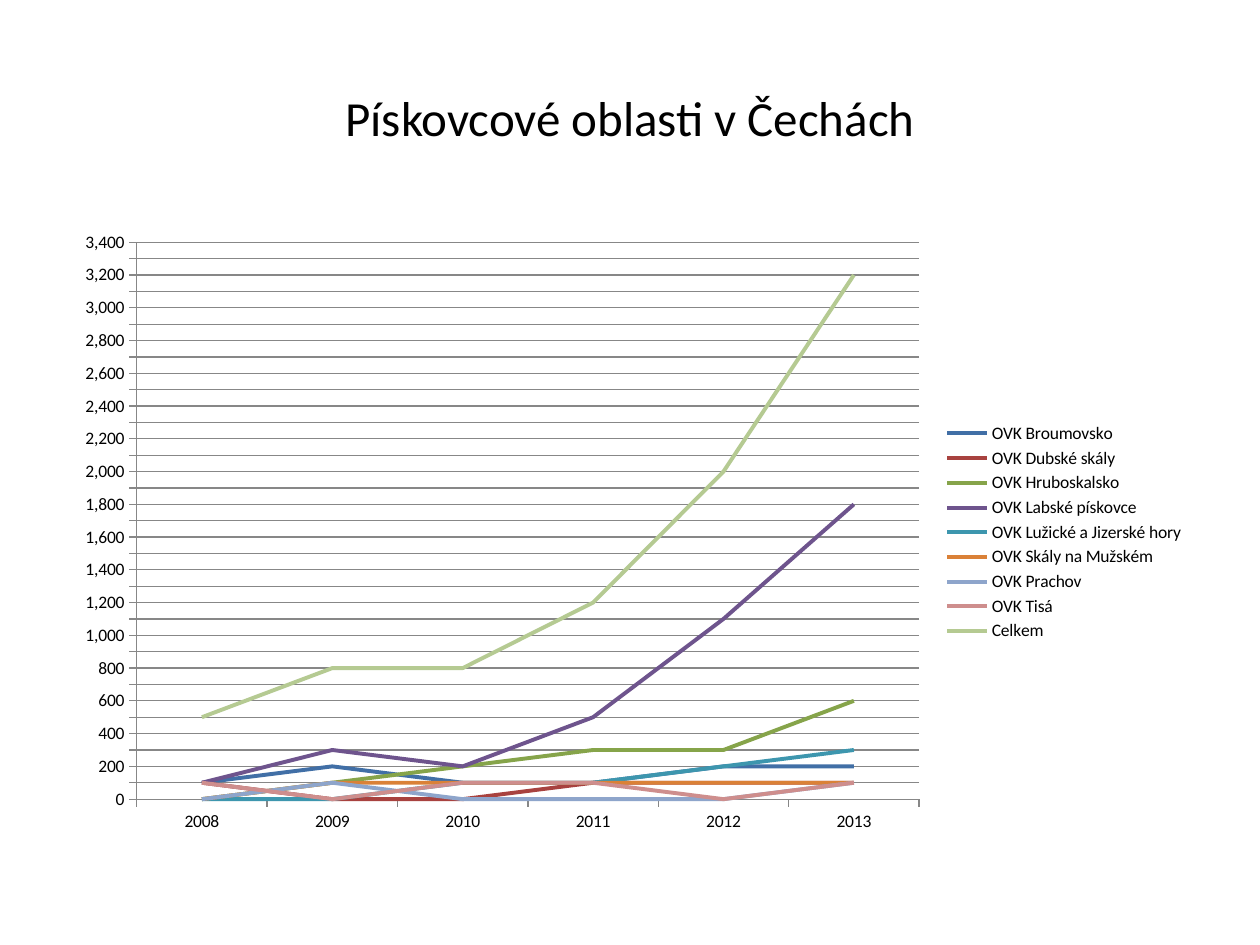
from typing import NamedTuple

from lxml import etree
from pptx import Presentation
from pptx.chart.data import CategoryChartData
from pptx.dml.color import RGBColor
from pptx.enum.chart import XL_CHART_TYPE, XL_LEGEND_POSITION, XL_MARKER_STYLE, XL_TICK_MARK
from pptx.enum.text import MSO_ANCHOR, PP_ALIGN
from pptx.oxml.ns import qn
from pptx.util import Inches, Pt

LINE_CHART = XL_CHART_TYPE.LINE
LEGEND_RIGHT = XL_LEGEND_POSITION.RIGHT
NO_MARKER = XL_MARKER_STYLE.NONE
TICK_OUTSIDE = XL_TICK_MARK.OUTSIDE
MIDDLE = MSO_ANCHOR.MIDDLE
CENTER = PP_ALIGN.CENTER

FONT = "Calibri"
BLACK = RGBColor(0x00, 0x00, 0x00)
AXIS_GRAY = RGBColor(0x87, 0x87, 0x87)
BLUE = RGBColor(0x41, 0x6F, 0xA6)
RED = RGBColor(0xA8, 0x42, 0x3F)
GREEN = RGBColor(0x86, 0xA4, 0x4A)
PURPLE = RGBColor(0x6E, 0x54, 0x8D)
TEAL = RGBColor(0x3D, 0x96, 0xAE)
ORANGE = RGBColor(0xDA, 0x81, 0x37)
LIGHT_BLUE = RGBColor(0x8E, 0xA5, 0xCB)
PINK = RGBColor(0xCE, 0x8E, 0x8D)
LIGHT_GREEN = RGBColor(0xB5, 0xCA, 0x92)

SLIDE_WIDTH, SLIDE_HEIGHT = Inches(10), Inches(7.5)


class Box(NamedTuple):
    """Left, top, width and height as shares of the enclosing area."""
    left: float
    top: float
    width: float
    height: float

    def on_slide(self) -> tuple[int, int, int, int]:
        return (int(self.left * SLIDE_WIDTH), int(self.top * SLIDE_HEIGHT),
                int(self.width * SLIDE_WIDTH), int(self.height * SLIDE_HEIGHT))


class Area(NamedTuple):
    name: str
    color: RGBColor
    counts: tuple[int, ...]


TITLE_BOX = Box(0.05, 0.04, 0.9, 1 / 6)
CHART_BOX = Box(0.05, 0.7 / 3, 0.9, 0.66)
PLOT_BOX = Box(0.065, 0.035, 0.69, 0.893)

YEARS = [str(year) for year in range(2008, 2014)]
AREAS = [
    Area("OVK Broumovsko", BLUE, (100, 200, 100, 100, 200, 200)),
    Area("OVK Dubské skály", RED, (100, 0, 0, 100, 100, 100)),
    Area("OVK Hruboskalsko", GREEN, (0, 100, 200, 300, 300, 600)),
    Area("OVK Labské pískovce", PURPLE, (100, 300, 200, 500, 1100, 1800)),
    Area("OVK Lužické a Jizerské hory", TEAL, (0, 0, 100, 100, 200, 300)),
    Area("OVK Skály na Mužském", ORANGE, (0, 100, 100, 100, 100, 100)),
    Area("OVK Prachov", LIGHT_BLUE, (0, 100, 0, 0, 0, 100)),
    Area("OVK Tisá", PINK, (100, 0, 100, 100, 0, 100)),
    Area("Celkem", LIGHT_GREEN, (500, 800, 800, 1200, 2000, 3200)),
]


def style_font(font, size: float, color: RGBColor = BLACK) -> None:
    font.name = FONT
    font.size = Pt(size)
    font.color.rgb = color


def style_line(line, color: RGBColor, width: float) -> None:
    line.color.rgb = color
    line.width = Pt(width)


def add_text(slide, text: str, box: Box, *, size: float, align=CENTER, anchor=MIDDLE) -> None:
    frame = slide.shapes.add_textbox(*box.on_slide()).text_frame
    frame.word_wrap = True
    frame.vertical_anchor = anchor
    paragraph = frame.paragraphs[0]
    paragraph.alignment = align
    run = paragraph.add_run()
    run.text = text
    style_font(run.font, size)


def place_plot(chart, box: Box) -> None:
    """Fix the inner plot area, given as shares of the chart."""
    plot_area = chart.plots[0]._element.getparent()
    for automatic in plot_area.findall(qn("c:layout")):
        plot_area.remove(automatic)
    layout = etree.Element(qn("c:layout"))
    manual = etree.SubElement(layout, qn("c:manualLayout"))
    settings = {"layoutTarget": "inner", "xMode": "edge", "yMode": "edge",
                "x": box.left, "y": box.top, "w": box.width, "h": box.height}
    for tag, value in settings.items():
        etree.SubElement(manual, qn(f"c:{tag}")).set("val", str(value))
    plot_area.insert(0, layout)


def add_area_chart(slide, areas: list[Area], box: Box) -> None:
    data = CategoryChartData(number_format="#,##0")
    data.categories = YEARS
    for area in areas:
        data.add_series(area.name, area.counts)
    chart = slide.shapes.add_chart(LINE_CHART, *box.on_slide(), data).chart
    chart.has_title = False
    style_font(chart.font, 10)

    chart.has_legend = True
    chart.legend.position = LEGEND_RIGHT
    chart.legend.include_in_layout = False

    chart.plots[0].vary_by_categories = False
    for series, area in zip(chart.plots[0].series, areas):
        series.smooth = False
        series.marker.style = NO_MARKER
        style_line(series.format.line, area.color, 2.25)

    for axis in (chart.category_axis, chart.value_axis):
        axis.major_tick_mark = TICK_OUTSIDE
        style_line(axis.format.line, AXIS_GRAY, 0.75)

    counts_axis = chart.value_axis
    counts_axis.minimum_scale, counts_axis.maximum_scale = 0, 3400
    counts_axis.major_unit = 100
    counts_axis.has_major_gridlines = True
    style_line(counts_axis.major_gridlines.format.line, AXIS_GRAY, 0.75)
    counts_axis.tick_labels.number_format = "#,##0"
    counts_axis.tick_labels.number_format_is_linked = False
    place_plot(chart, PLOT_BOX)


def main() -> None:
    presentation = Presentation()
    presentation.slide_width, presentation.slide_height = SLIDE_WIDTH, SLIDE_HEIGHT
    slide = presentation.slides.add_slide(presentation.slide_layouts[6])
    add_text(slide, "Pískovcové oblasti v Čechách", TITLE_BOX, size=28)
    add_area_chart(slide, AREAS, CHART_BOX)
    presentation.save("out.pptx")


if __name__ == "__main__":
    main()
